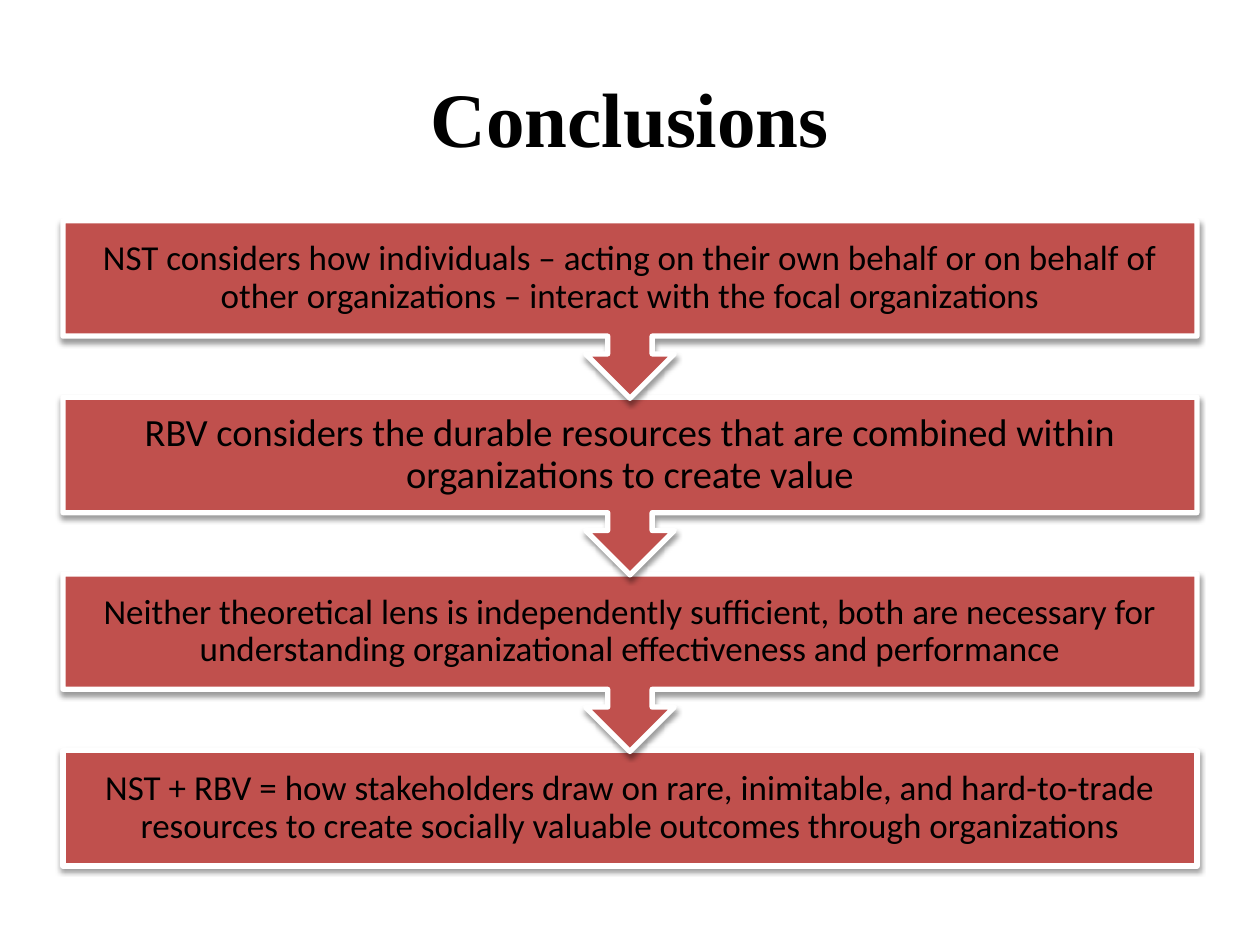
"""Build the Conclusions slide: four stacked statements linked by arrow callouts."""
import lxml.etree
import pptx
import pptx.dml.color
import pptx.enum.shapes
import pptx.enum.text
import pptx.oxml
import pptx.util

Cm = pptx.util.Cm
Pt = pptx.util.Pt
RGB = pptx.dml.color.RGBColor.from_string
SHAPES = pptx.enum.shapes.MSO_SHAPE
CENTER = pptx.enum.text.PP_ALIGN.CENTER
MIDDLE = pptx.enum.text.MSO_ANCHOR.MIDDLE

COLORS = {"step": "C0504D", "outline": "FFFFFF", "text": "000000", "shadow": "000000"}
SHADOW = (
    '<a:outerShdw xmlns:a="http://schemas.openxmlformats.org/drawingml/2006/main"'
    ' blurRad="40000" dist="20000" dir="5400000" rotWithShape="0">'
    f'<a:srgbClr val="{COLORS["shadow"]}"><a:alpha val="38000"/></a:srgbClr>'
    "</a:outerShdw>"
)
STEPS = [
    ("NST considers how individuals – acting on their own behalf or on behalf of "
     "other organizations – interact with the focal organizations", 20, 0.4),
    ("RBV considers the durable resources that are combined within "
     "organizations to create value", 22, 0.43),
    ("Neither theoretical lens is independently sufficient, both are necessary for "
     "understanding organizational effectiveness and performance", 20, 0.4),
    ("NST + RBV = how stakeholders draw on rare, inimitable, and hard-to-trade "
     "resources to create socially valuable outcomes through organizations", 20, 0.4),
]
LEFT, WIDTH = 1.27, 22.86
FIRST_TOP, PITCH = 4.45, 3.56
CALLOUT_HEIGHT, BOX_HEIGHT = 3.58, 2.33


def write(frame, text, font_name, size, bold=False):
    frame.word_wrap = True
    frame.vertical_anchor = MIDDLE
    frame.text = text
    para = frame.paragraphs[0]
    para.alignment = CENTER
    para.font.name = font_name
    para.font.size = Pt(size)
    para.font.bold = bold
    para.font.color.rgb = RGB(COLORS["text"])
    return para


deck = pptx.Presentation()
deck.slide_width = Cm(25.4)
deck.slide_height = Cm(19.05)
page = deck.slides.add_slide(deck.slide_layouts[5])

title = page.shapes.title
title.left, title.top, title.width, title.height = Cm(LEFT), Cm(0.76), Cm(WIDTH), Cm(3.18)
write(title.text_frame, "Conclusions", "Times New Roman", 44, bold=True)

last = len(STEPS) - 1
for index, (text, size, inset) in reversed(list(enumerate(STEPS))):
    kind = SHAPES.RECTANGLE if index == last else SHAPES.DOWN_ARROW_CALLOUT
    height = BOX_HEIGHT if index == last else CALLOUT_HEIGHT
    box = page.shapes.add_shape(
        kind, Cm(LEFT), Cm(FIRST_TOP + index * PITCH), Cm(WIDTH), Cm(height))
    box.name = f"Step {index + 1}"
    box.fill.solid()
    box.fill.fore_color.rgb = RGB(COLORS["step"])
    box.line.color.rgb = RGB(COLORS["outline"])
    box.line.width = Pt(3)
    box.shadow.inherit = False
    effects = box.element.spPr.find(pptx.oxml.ns.qn("a:effectLst"))
    effects.append(lxml.etree.fromstring(SHADOW))

    frame = box.text_frame
    frame.margin_left = frame.margin_right = Cm(inset)
    frame.margin_top = frame.margin_bottom = Cm(inset)
    para = write(frame, text, "Calibri", size)
    para.line_spacing = 0.9

deck.save("out.pptx")
